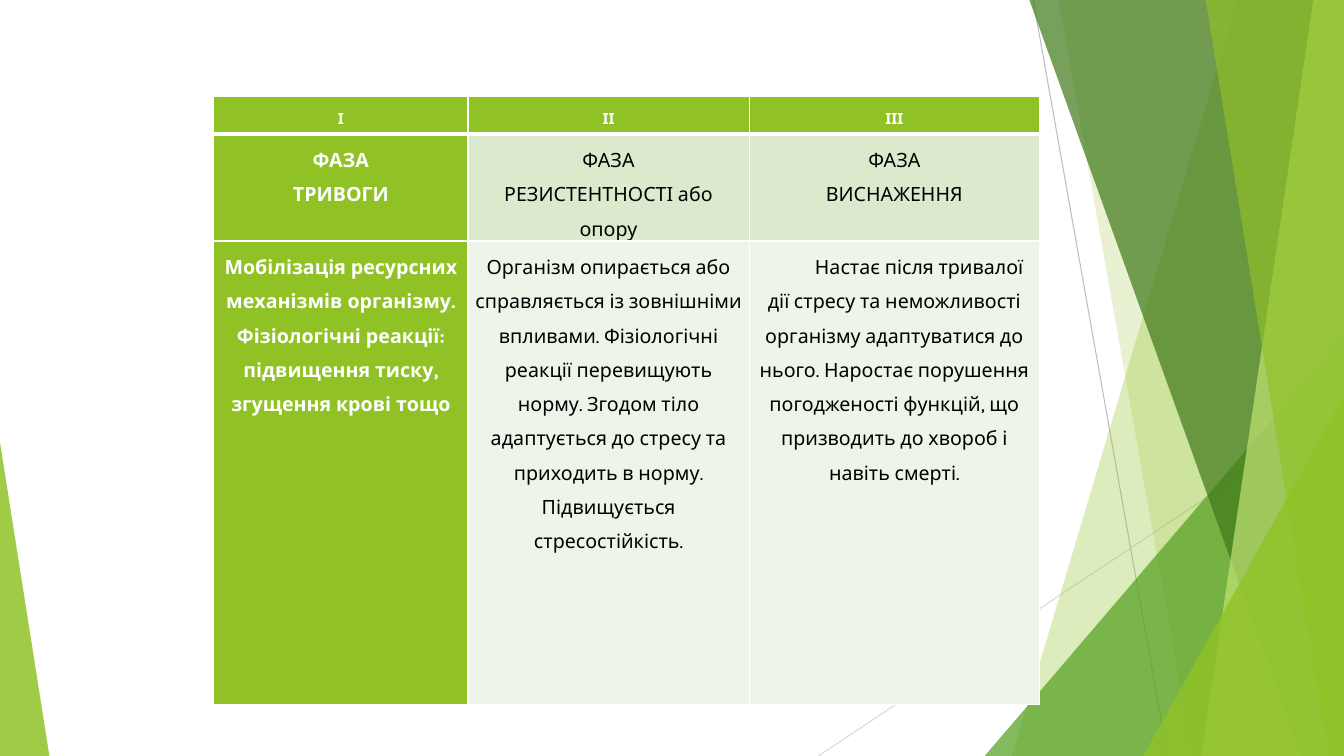
from lxml.etree import SubElement
from pptx import Presentation
from pptx.dml.color import RGBColor
from pptx.enum.shapes import MSO_CONNECTOR as CONN, MSO_SHAPE as SHAPE
from pptx.enum.text import PP_ALIGN as ALIGN
from pptx.oxml import parse_xml
from pptx.oxml.ns import nsdecls, qn
from pptx.util import Pt

GREEN, WHITE, BLACK = "90C226", "FFFFFF", "000000"
WIDTH, HEIGHT, TOP = 960, 540, -0.6


def paint(fill, color, opacity=100):
    """Fill with a solid colour; opacity is in percent."""
    fill.solid()
    fill.fore_color.rgb = RGBColor.from_string(color)
    if opacity < 100:
        clr = fill._xPr.find(qn("a:solidFill"))[0]
        SubElement(clr, qn("a:alpha")).set("val", str(opacity * 1000))


prs = Presentation()
prs.slide_width, prs.slide_height = Pt(WIDTH), Pt(HEIGHT)
s = prs.slides.add_slide(prs.slide_layouts[6])

# Thin lines behind the facets
for x1, y1, x2, y2, color in [(738, 0, 834, HEIGHT, "BFBFBF"),
                              (WIDTH, 290, 584.6, HEIGHT, "D9D9D9")]:
    line = s.shapes.add_connector(CONN.STRAIGHT, Pt(x1), Pt(y1), Pt(x2), Pt(y2))
    line.line.width = Pt(0.75)
    paint(line.line.fill, color)
    SubElement(line._element.spPr, qn("a:effectLst"))

# Bands: top x, bottom x; each reaches the right edge of the slide.
# Triangles: left, top, width, apex; each stands on the bottom edge.
facets = [
    ("band", (884.2, 722.9), GREEN, 30),
    ("band", (756, 851.8), GREEN, 20),
    ("triangle", (703.4, 239.8, 256.6, 1), "54A021", 72),
    ("band", (735.1, 929.5), "3F7819", 70),
    ("band", (938.2, 858.2), "C0E474", 70),
    ("band", (861.1, 949), GREEN, 65),
    ("triangle", (816.5, 283, 143.5, 1), GREEN, 80),
    ("triangle", (0, 316.1, 35.3, 0), GREEN, 85),
]
for kind, place, color, opacity in facets:
    if kind == "band":
        top_x, bottom_x = place
        outline = s.shapes.build_freeform(Pt(top_x), Pt(TOP))
        outline.add_line_segments([(Pt(WIDTH), Pt(TOP)), (Pt(WIDTH), Pt(HEIGHT)),
                                   (Pt(bottom_x), Pt(HEIGHT))])
        sp = outline.convert_to_shape()
    else:
        x, y, w, apex = place
        sp = s.shapes.add_shape(SHAPE.ISOSCELES_TRIANGLE, Pt(x), Pt(y), Pt(w), Pt(HEIGHT - y))
        sp.adjustments[0] = apex
    paint(sp.fill, color, opacity)
    sp.line.fill.background()
    sp.shadow.inherit = False

# Table of the stress phases
col_widths = [181.5, 200.9, 207.4]
row_heights = [26.6, 65.5, 331.2]
body_fills = [None, "DBE9CD", "EEF4E8"]
phases = [
    [["І"], ["ІІ"], ["ІІІ"]],
    [["ФАЗА", "ТРИВОГИ"], ["ФАЗА", "РЕЗИСТЕНТНОСТІ або опору"], ["ФАЗА", "ВИСНАЖЕННЯ"]],
    [["Мобілізація ресурсних механізмів організму.",
      "Фізіологічні реакції: підвищення тиску, згущення крові тощо"],
     ["Організм опирається або справляється із зовнішніми впливами. "
      "Фізіологічні реакції перевищують норму. Згодом тіло адаптується до стресу "
      "та приходить в норму. Підвищується стресостійкість."],
     ["Настає після тривалої дії стресу та неможливості організму адаптуватися до нього. "
      "Наростає порушення погодженості функцій, що призводить до хвороб і навіть смерті."]],
]
table = s.shapes.add_table(3, 3, Pt(152.8), Pt(69.2), Pt(sum(col_widths)),
                           Pt(sum(row_heights))).table
for col, width in zip(table.columns, col_widths):
    col.width = Pt(width)
for row, height in zip(table.rows, row_heights):
    row.height = Pt(height)

for i, row in enumerate(phases):
    for j, texts in enumerate(row):
        cell = table.cell(i, j)
        accent = i == 0 or j == 0
        paint(cell.fill, GREEN if accent else body_fills[i])
        cell.margin_left = cell.margin_right = Pt(4.86)
        cell.margin_top, cell.margin_bottom = Pt(2.9), Pt(0)
        widths = {"L": 1, "R": 1, "T": 3 if i == 1 else 1, "B": 3 if i == 0 else 1}
        for k, (side, width) in enumerate(widths.items()):
            border = parse_xml(
                f'<a:ln{side} {nsdecls("a")} w="{Pt(width)}"><a:solidFill>'
                f'<a:srgbClr val="{WHITE}"/></a:solidFill></a:ln{side}>')
            cell._tc.tcPr.insert(k, border)
        tf = cell.text_frame
        for n, text in enumerate(texts):
            p = tf.add_paragraph() if n else tf.paragraphs[0]
            p.alignment, p.line_spacing = ALIGN.CENTER, 1.5
            if (i, j) == (2, 2):
                p._p.get_or_add_pPr().set("indent", str(Pt(35.4)))
            r = p.add_run()
            r.text = text
            r.font.name, r.font.size = "Karla", Pt(11 if i == 0 else 14)
            r.font.bold = accent
            paint(r.font.fill, WHITE if accent else BLACK)

prs.save("out.pptx")
